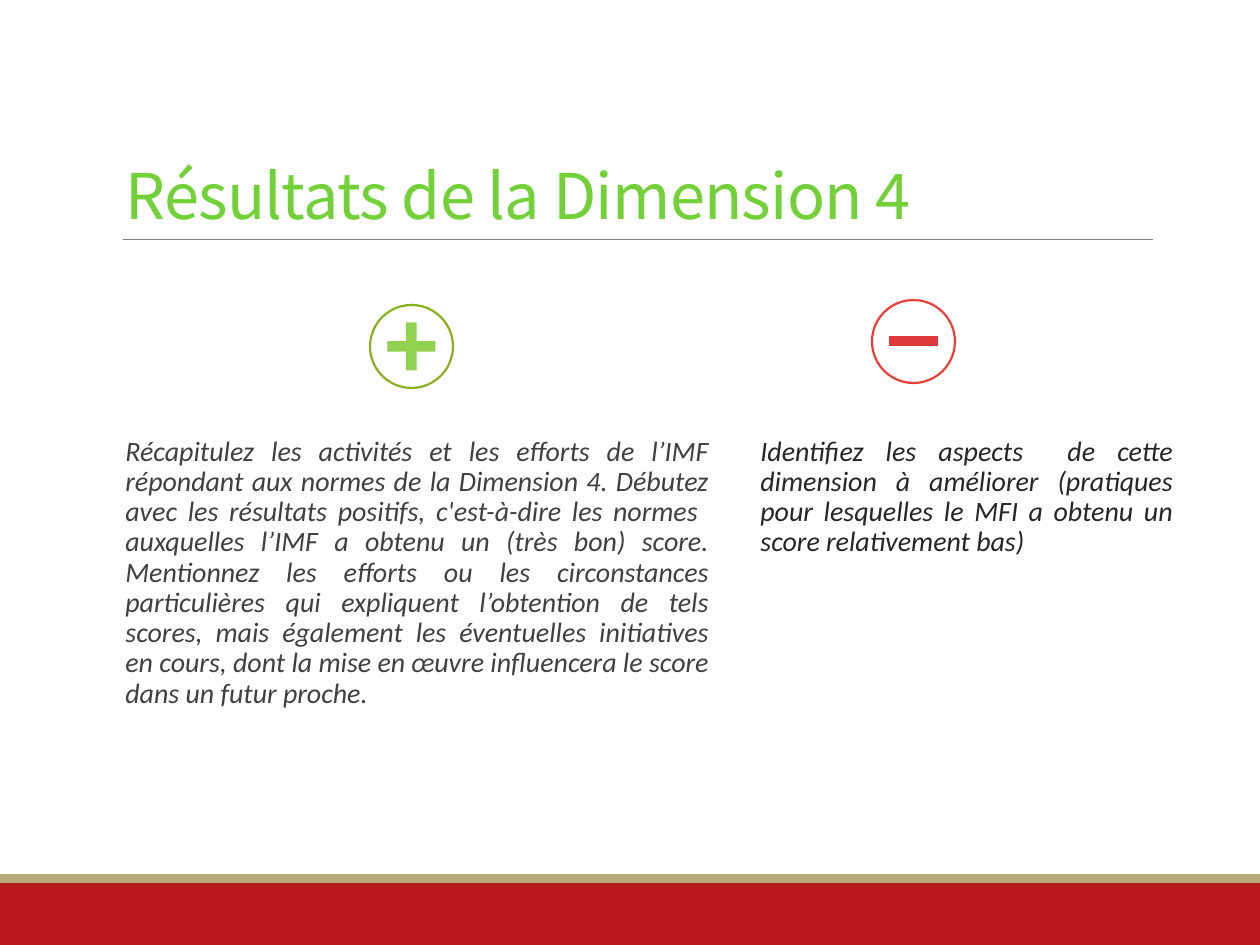
from pptx import Presentation
from pptx.dml.color import RGBColor
from pptx.enum.shapes import MSO_CONNECTOR, MSO_SHAPE as SHAPE
from pptx.enum.text import MSO_ANCHOR as ANCHOR, PP_ALIGN as ALIGN
from pptx.oxml.ns import qn
from pptx.util import Pt
from lxml import etree

PX_PER_INCH = 126
BADGE_SIZE = 83

TITLE = "Résultats de la Dimension 4"
STRENGTHS = (
    "Récapitulez les activités et les efforts de l’IMF répondant aux normes de la "
    "Dimension 4. Débutez avec les résultats positifs, c'est-à-dire les normes  "
    "auxquelles l’IMF a obtenu un (très bon) score. Mentionnez les efforts ou les "
    "circonstances particulières qui expliquent l’obtention de tels scores, mais "
    "également les éventuelles initiatives en cours, dont la mise en œuvre "
    "influencera le score dans un futur proche."
)
WEAKNESSES = (
    "Identifiez les aspects  de cette dimension à améliorer (pratiques pour "
    "lesquelles le MFI a obtenu un score relativement bas)"
)


def px(n):
    return round(n * 914400 / PX_PER_INCH)


def rgb(value):
    return RGBColor.from_string(value)


def add_shape(slide, kind, x, y, w, h, fill=None, line=None):
    sp = slide.shapes.add_shape(kind, px(x), px(y), px(w), px(h))
    sp.shadow.inherit = False
    if fill:
        sp.fill.solid()
        sp.fill.fore_color.rgb = rgb(fill)
    else:
        sp.fill.background()
    if line:
        sp.line.color.rgb = rgb(line)
        sp.line.width = Pt(1.25)
    else:
        sp.line.fill.background()
    return sp


def add_rule(slide, x1, x2, y, color):
    rule = slide.shapes.add_connector(MSO_CONNECTOR.STRAIGHT, px(x1), px(y), px(x2), px(y))
    rule.line.color.rgb = rgb(color)
    rule.line.width = Pt(0.5)
    etree.SubElement(rule._element.spPr, qn("a:effectLst"))


def add_text(slide, text, x, y, w, h, *, font, size, color, italic=False, right=0,
             align=ALIGN.LEFT, anchor=ANCHOR.TOP, line_spacing=0.9, tracking=None):
    """Add a wrapped text box; tracking is in hundredths of a point."""
    tf = slide.shapes.add_textbox(px(x), px(y), px(w), px(h)).text_frame
    tf.word_wrap = True
    tf.vertical_anchor = anchor
    tf.margin_right = px(right)
    p = tf.paragraphs[0]
    p.alignment = align
    p.line_spacing = line_spacing
    r = p.add_run()
    r.text = text
    r.font.name = font
    r.font.size = Pt(size)
    r.font.italic = italic
    r.font.color.rgb = rgb(color)
    if tracking is not None:
        r._r.get_or_add_rPr().set("spc", str(tracking))


def add_badge(slide, x, y, color, sign, sign_w, sign_h, sign_color):
    """Draw a ring with a sign centred in it and return the sign."""
    sp = add_shape(slide, sign, x + (BADGE_SIZE - sign_w) / 2, y + (BADGE_SIZE - sign_h) / 2,
                   sign_w, sign_h, fill=sign_color)
    add_shape(slide, SHAPE.OVAL, x, y, BADGE_SIZE, BADGE_SIZE, line=color)
    return sp


def main():
    prs = Presentation()
    prs.slide_width, prs.slide_height = px(1260), px(945)
    slide = prs.slides.add_slide(prs.slide_layouts[6])
    slide.background.fill.solid()
    slide.background.fill.fore_color.rgb = rgb("FEFDFF")

    add_shape(slide, SHAPE.RECTANGLE, 0, 882, 1260, 63, fill="B91A1B")
    add_shape(slide, SHAPE.RECTANGLE, 0, 874, 1260, 9, fill="B8AA76")
    add_rule(slide, 123, 1153, 239, "808080")
    add_text(slide, TITLE, 113, 39, 1040, 200, font="Noto Sans CJK KR", size=36,
             color="71D136", anchor=ANCHOR.BOTTOM, line_spacing=0.85, tracking=-40)

    for text, x, w, color in ((STRENGTHS, 113, 596, "404040"), (WEAKNESSES, 748, 425, "262626")):
        add_text(slide, text, x, 431, w, 447, font="Calibri", size=16, color=color,
                 italic=True, align=ALIGN.JUSTIFY)

    add_badge(slide, 872, 300, "E93F36", SHAPE.FLOWCHART_PROCESS, 49, 10, "DF3939")
    plus = add_badge(slide, 370, 305, "88B219", SHAPE.CROSS, 48, 48, "92D050")
    plus.adjustments[0] = 0.39

    prs.save("out.pptx")


if __name__ == "__main__":
    main()
